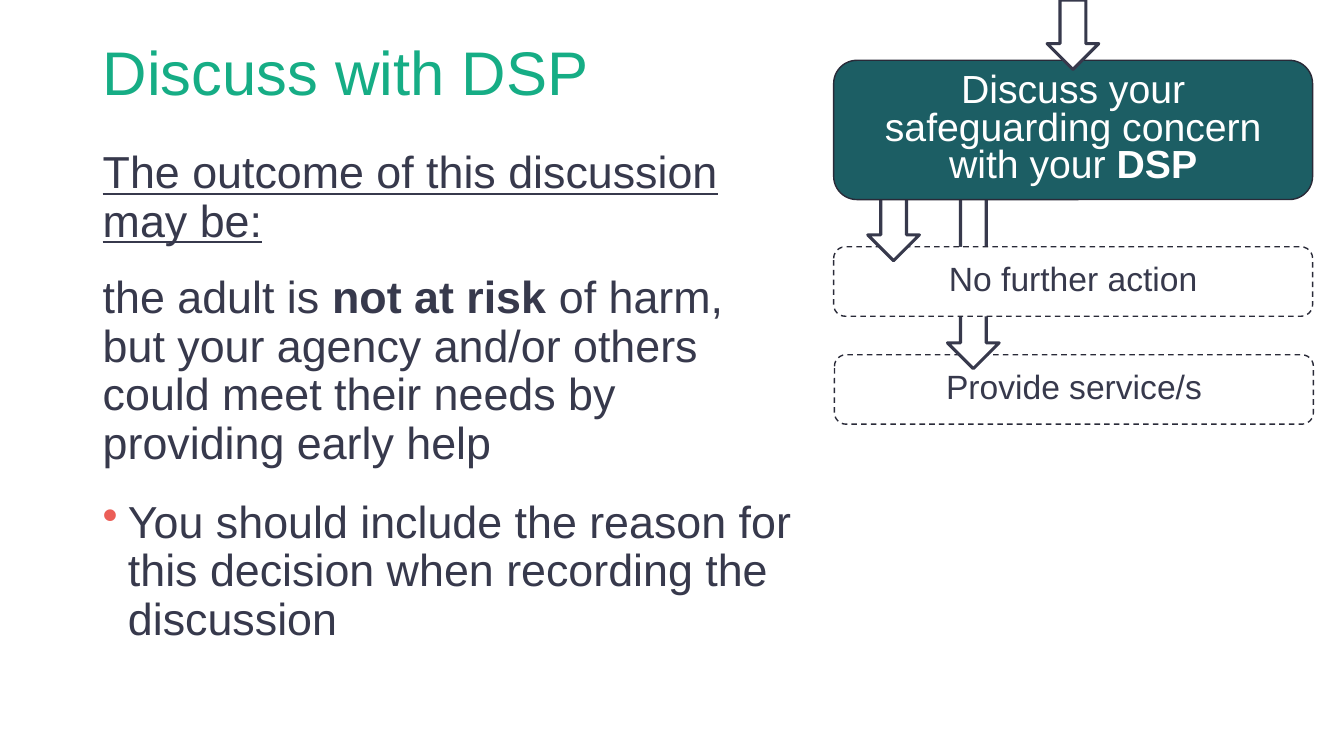
from lxml import etree
from pptx import Presentation
from pptx import util as u
from pptx.dml.color import RGBColor
from pptx.enum import dml, shapes, text
from pptx.oxml import ns

COLORS = {"title": "16AD85", "ink": "37394C", "outline": "292A38",
          "bullet": "EB5E57", "teal": "1C5E64", "white": "FFFFFF"}
FONT = "Arial"
ARROW_WIDTH = 1.3


def color(name):
    return RGBColor.from_string(COLORS[name])


def add_bullet(paragraph, indent=0.25):
    """Hang the paragraph behind a coloured dot."""
    properties = paragraph._p.get_or_add_pPr()
    properties.set("marL", str(u.Inches(indent)))
    properties.set("indent", str(-u.Inches(indent)))
    bullet_color = etree.SubElement(properties, ns.qn("a:buClr"))
    etree.SubElement(bullet_color, ns.qn("a:srgbClr"), val=COLORS["bullet"])
    etree.SubElement(properties, ns.qn("a:buChar"), char="•")


def write(paragraph, *parts, size, ink="ink", align=text.PP_ALIGN.LEFT,
          spacing=0.9, before=0, after=0, underline=False, bullet=False):
    """Write parts in turn; every second part is bold, newlines break the line."""
    if bullet:
        add_bullet(paragraph)
    paragraph.alignment = align
    paragraph.line_spacing = spacing
    paragraph.space_before, paragraph.space_after = u.Pt(before), u.Pt(after)
    for index, part in enumerate(parts):
        for number, line in enumerate(part.split("\n")):
            if number:
                paragraph.add_line_break()
            run = paragraph.add_run()
            run.text = line
            font = run.font
            font.name, font.size = FONT, u.Pt(size)
            font.bold, font.underline = index % 2 == 1, underline
            font.color.rgb = color(ink)


def add_text_frame(slide, box, anchor=text.MSO_ANCHOR.TOP):
    frame = slide.shapes.add_textbox(*map(u.Cm, box)).text_frame
    frame.word_wrap = True
    frame.vertical_anchor = anchor
    return frame


def add_outlined_shape(slide, kind, box, fill, line, width):
    shape = slide.shapes.add_shape(kind, *map(u.Cm, box))
    shape.shadow.inherit = False
    shape.fill.solid()
    shape.fill.fore_color.rgb = color(fill)
    shape.line.color.rgb = color(line)
    shape.line.width = u.Pt(width)
    return shape


def add_explanation(slide, left, top, width):
    """Title, underlined lead-in and body, stacked from the top."""
    title = add_text_frame(slide, (left, top, width, 1.75), text.MSO_ANCHOR.MIDDLE)
    write(title.paragraphs[0], "Discuss with DSP", size=44, ink="title")

    lead = add_text_frame(slide, (left, top + 2.64, width, 1.42))
    write(lead.paragraphs[0], "The outcome of this discussion may be:",
          size=32, after=12, underline=True)

    body = add_text_frame(slide, (left, top + 5.79, width + 1.17, 10.54))
    write(body.paragraphs[0], "the adult is ", "not at risk ",
          "of harm, \nbut your agency and/or others \n"
          "could meet their needs by \nproviding early help", size=32, after=12)
    write(body.add_paragraph(),
          "You should include the reason for this decision when recording the discussion",
          size=32, before=10, after=12, bullet=True)


def add_step(slide, box, parts, arrow_offset, arrow_top, overlap,
             size=24, fill="white", ink="ink", dashed=True):
    """One flow box with the arrow that points down into it."""
    left, top = box[:2]
    step = add_outlined_shape(slide, shapes.MSO_SHAPE.ROUNDED_RECTANGLE,
                              box, fill, "outline", 1)
    if dashed:
        step.line.dash_style = dml.MSO_LINE.DASH
    step.text_frame.word_wrap = True
    step.text_frame.vertical_anchor = text.MSO_ANCHOR.MIDDLE
    write(step.text_frame.paragraphs[0], *parts, size=size, ink=ink,
          align=text.PP_ALIGN.CENTER, spacing=0.8)
    arrow_box = (left + arrow_offset, arrow_top, ARROW_WIDTH,
                 top + overlap - arrow_top)
    add_outlined_shape(slide, shapes.MSO_SHAPE.DOWN_ARROW, arrow_box,
                       "white", "ink", 2.25)


def add_flow(slide, left, top, width):
    """Steps from the last to the first, so earlier ones cover later arrows."""
    add_step(slide, (left + 0.02, top + 7.42, width, 1.75), ["Provide service/s"],
             arrow_offset=2.85, arrow_top=top + 3.15, overlap=0.35)
    add_step(slide, (left, top + 4.7, width, 1.75), ["No further action"],
             arrow_offset=0.86, arrow_top=top + 3.28, overlap=0.35)
    add_step(slide, (left, top, width, 3.51),
             ["Discuss your safeguarding concern with your\u00a0".replace("\u00a0", " "), "DSP"],
             arrow_offset=5.38, arrow_top=0, overlap=0.23,
             size=28, fill="teal", ink="white", dashed=False)


def main():
    presentation = Presentation()
    presentation.slide_width, presentation.slide_height = u.Cm(33.87), u.Cm(19.05)
    slide = presentation.slides.add_slide(presentation.slide_layouts[6])
    add_explanation(slide, left=2.34, top=1.02, width=17.42)
    add_flow(slide, left=21.01, top=1.52, width=12.07)
    presentation.save("out.pptx")


if __name__ == "__main__":
    main()
